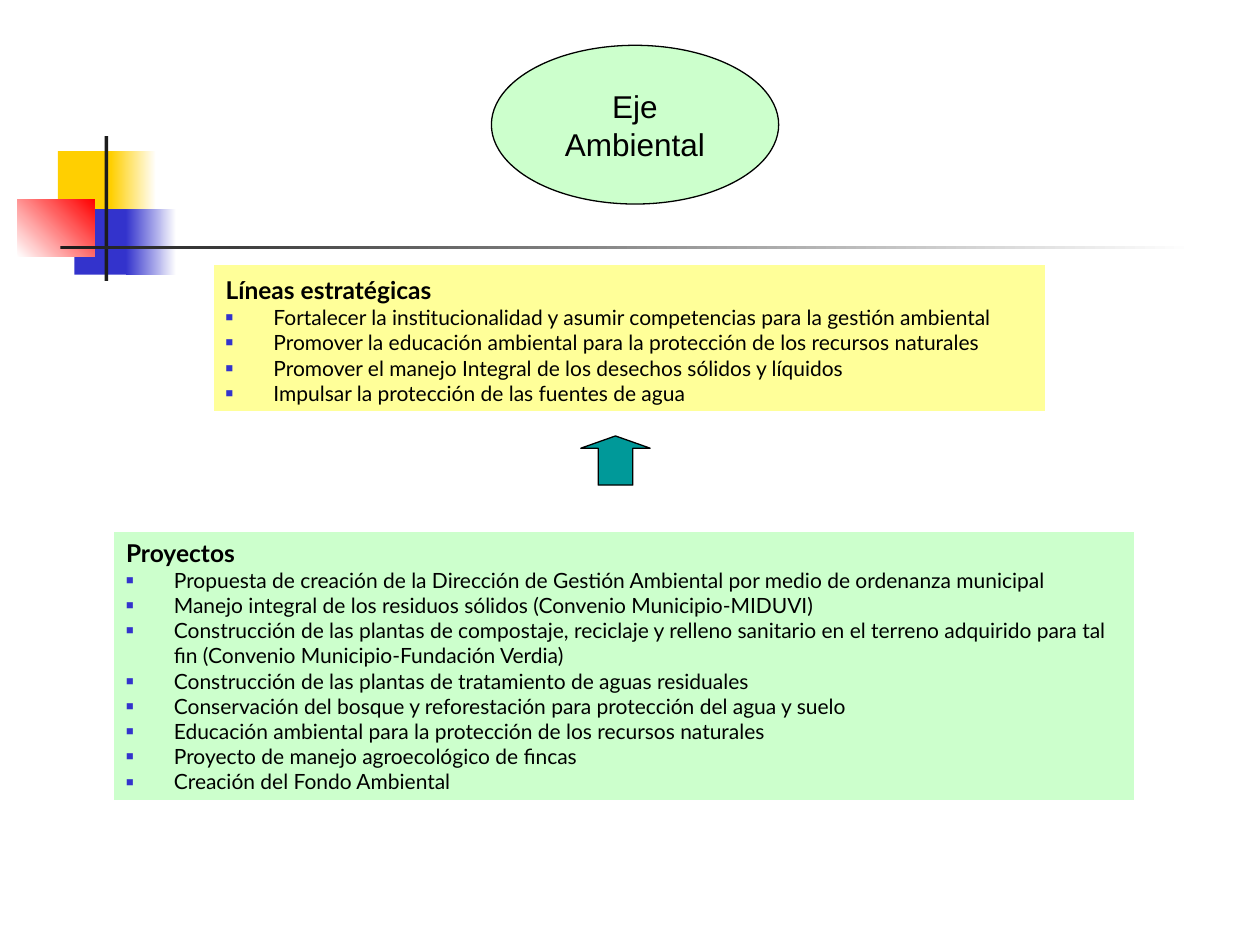
from pptx import Presentation
from pptx.dml.color import RGBColor
from pptx.enum.shapes import MSO_SHAPE
from pptx.enum.text import MSO_ANCHOR, PP_ALIGN
from pptx.oxml import parse_xml
from pptx.oxml.ns import nsdecls
from pptx.util import Inches, Pt


def tint(code):
    """Turn a hex string into a colour."""
    return RGBColor.from_string(code)


class Deck:
    """Hold the style and the current slide."""

    ink = "000000"
    mark = "3333CC"
    face = "Lato"

    def __init__(self, slide):
        """Keep the slide to draw on."""
        self.slide = slide

    def shape(self, kind, box, fill, edge=None):
        """Add a preset shape with a plain fill."""
        item = self.slide.shapes.add_shape(kind, *map(Inches, box))
        item.shadow.inherit = False
        item.fill.solid()
        item.fill.fore_color.rgb = tint(fill)
        if edge:
            item.line.color.rgb = tint(edge)
            item.line.width = Pt(0.75)
        else:
            item.line.fill.background()
        return item

    def fade(self, box, start, end, angle=0):
        """Add a rectangle that blends two colours."""
        item = self.shape(MSO_SHAPE.RECTANGLE, box, start)
        item.fill.gradient()
        item.fill.gradient_angle = angle
        for stop, code in zip(item.fill.gradient_stops, (start, end)):
            stop.color.rgb = tint(code)

    def font(self, para, face, size, bold=False):
        """Set the font of a paragraph."""
        font = para.font
        font.name, font.size, font.bold = face, Pt(size), bold
        font.color.rgb = tint(self.ink)

    def oval(self, box, fill, lines):
        """Add an ellipse with centred lines."""
        frame = self.shape(MSO_SHAPE.OVAL, box, fill, self.ink).text_frame
        frame.word_wrap = False
        frame.vertical_anchor = MSO_ANCHOR.MIDDLE
        frame.text = "\n".join(lines)
        for para in frame.paragraphs:
            para.alignment = PP_ALIGN.CENTER
            self.font(para, "Arial", 18)

    def bullet(self, para):
        """Give a paragraph a small square bullet."""
        props = para._p.get_or_add_pPr()
        for body in (
            f'<a:buClr {nsdecls("a")}><a:srgbClr val="{self.mark}"/></a:buClr>',
            f'<a:buSzPct {nsdecls("a")} val="60000"/>',
            f'<a:buFont {nsdecls("a")} typeface="Arial"/>',
            f'<a:buChar {nsdecls("a")} char="■"/>',
        ):
            props.insert_element_before(parse_xml(body), "a:tabLst", "a:defRPr", "a:extLst")

    def panel(self, box, fill, title, items):
        """Add a one-cell table with a title and a list."""
        table = self.slide.shapes.add_table(1, 1, *map(Inches, box)).table
        table.first_row = table.horz_banding = False
        cell = table.cell(0, 0)
        cell.fill.solid()
        cell.fill.fore_color.rgb = tint(fill)
        cell.vertical_anchor = MSO_ANCHOR.BOTTOM
        cell.text = "\n".join([title, *items])
        for row, para in enumerate(cell.text_frame.paragraphs):
            props = para._p.get_or_add_pPr()
            props.set("marL", str(Inches(0.38)))
            props.set("indent", str(-Inches(0.38)))
            self.font(para, self.face, 12 if row else 14, not row)
            if row:
                self.bullet(para)


def main():
    """Build the slide and save it."""
    show = Presentation()
    show.slide_width, show.slide_height = Inches(10), Inches(7.5)
    deck = Deck(show.slides.add_slide(show.slide_layouts[6]))
    rect = MSO_SHAPE.RECTANGLE

    deck.shape(rect, (0.46, 1.2, 0.48, 0.52), "FFCF01")
    deck.fade((0.88, 1.2, 0.36, 0.52), "FFCF01", "FFFFFF")
    deck.shape(rect, (0.59, 1.66, 0.46, 0.52), "3333CC")
    deck.fade((1, 1.66, 0.4, 0.52), "3333CC", "FFFFFF")
    deck.fade((0.14, 1.58, 0.61, 0.46), "FFFFFF", "FF0000", 45)
    deck.shape(rect, (0.83, 1.08, 0.03, 1.15), "1C1C1C")
    deck.fade((0.48, 1.95, 9, 0.03), "1C1C1C", "FFFFFF")

    deck.oval((3.9, 0.36, 2.28, 1.26), "CCFFCC", ("Eje", "Ambiental"))
    deck.panel((0.9, 4.22, 8.11, 2.13), "CCFFCC", "Proyectos", (
        "Propuesta de creación de la Dirección de Gestión Ambiental por medio de ordenanza municipal",
        "Manejo integral de los residuos sólidos (Convenio Municipio-MIDUVI)",
        "Construcción de las plantas de compostaje, reciclaje y relleno sanitario en el terreno "
        "adquirido para tal fin (Convenio Municipio-Fundación Verdia)",
        "Construcción de las plantas de tratamiento de aguas residuales",
        "Conservación del bosque y reforestación para protección del agua y suelo",
        "Educación ambiental para la protección de los recursos naturales",
        "Proyecto de manejo agroecológico de fincas",
        "Creación del Fondo Ambiental",
    ))
    arrow = deck.shape(MSO_SHAPE.UP_ARROW, (4.61, 3.46, 0.55, 0.39), "009999", deck.ink)
    arrow.adjustments[0], arrow.adjustments[1] = 0.5, 0.25
    deck.panel((1.69, 2.1, 6.61, 1.17), "FFFF99", "Líneas estratégicas", (
        "Fortalecer la institucionalidad y asumir competencias para la gestión ambiental",
        "Promover la educación ambiental para la protección de los recursos naturales",
        "Promover el manejo Integral de los desechos sólidos y líquidos",
        "Impulsar la protección de las fuentes de agua",
    ))
    show.save("out.pptx")


if __name__ == "__main__":
    main()
